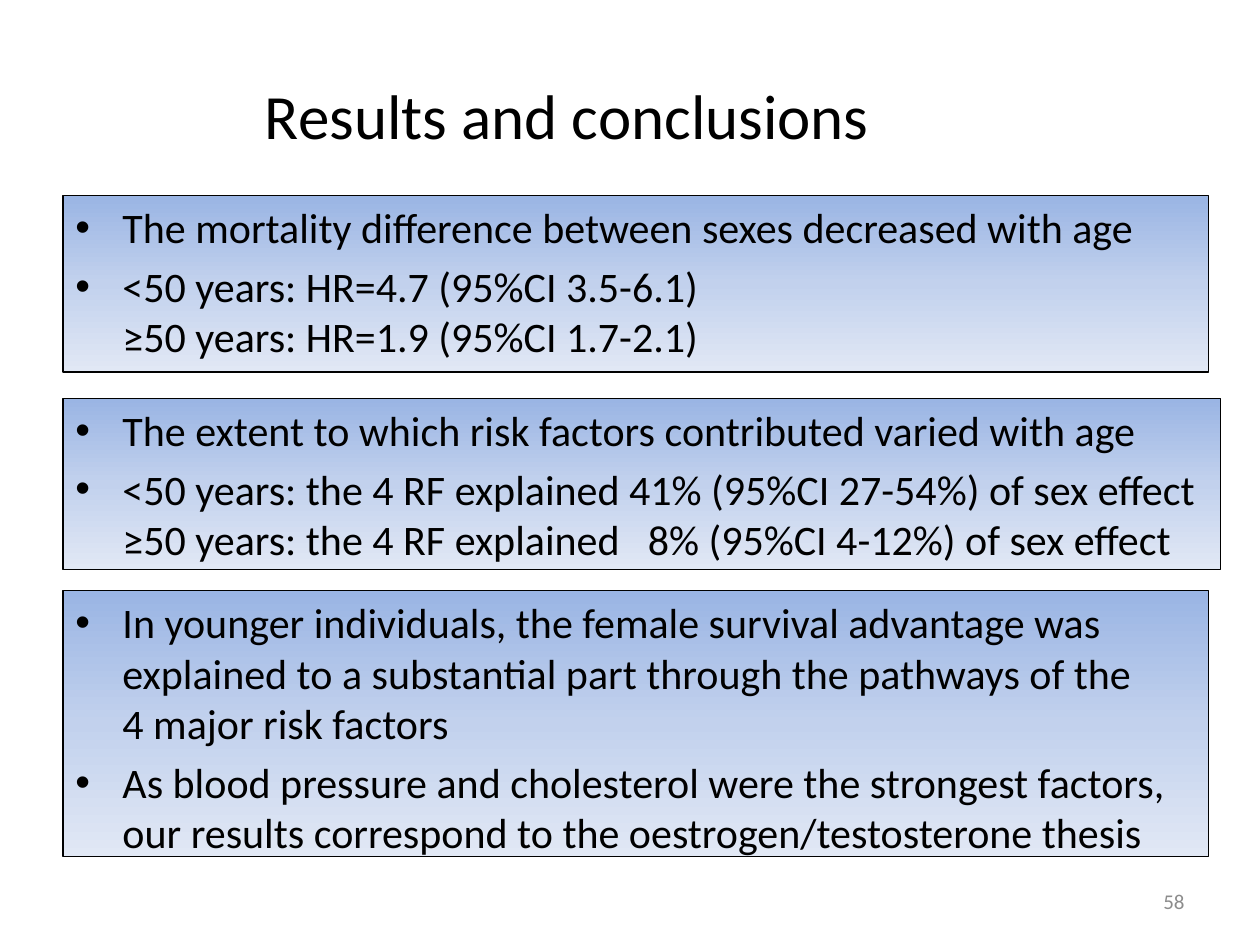
from copy import deepcopy
from lxml import etree
from pptx import Presentation, util as u
from pptx.dml.color import RGBColor
from pptx.enum import shapes, text
from pptx.oxml.ns import qn

TITLE = "Results and conclusions"
PAGE = "58"
LEFT, HANG, TAB = 1.27, 0.95, 11.54
BOXES = [
    (3.94, 23.09, 3.56, [
        ["The mortality difference between sexes decreased with age"],
        ["<50 years: HR=4.7 (95%CI 3.5-6.1)",
         "≥50 years: HR=1.9 (95%CI 1.7-2.1)"]]),
    (8.03, 23.34, 3.45, [
        ["The extent to which risk factors contributed varied with age"],
        ["<50 years: the 4 RF explained 41% (95%CI 27-54%) of sex effect",
         "≥50 years: the 4 RF explained\t8% (95%CI 4-12%) of sex effect"]]),
    (11.91, 23.09, 5.36, [
        ["In younger individuals, the female survival advantage was explained "
         "to a substantial part through the pathways of the",
         "4 major risk factors"],
        ["As blood pressure and cholesterol were the strongest factors, our "
         "results correspond to the oestrogen/testosterone thesis"]]),
]
STOPS = [(0, "9AB5E4"), (0.5, "C2D1ED"), (1, "E1E8F5")]


def paint(color, code):
    color.rgb = RGBColor.from_string(code)


def write(para, words, size, code="000000"):
    run = para.add_run()
    run.text = words
    run.font.name = "Calibri"
    run.font.size = u.Pt(size)
    paint(run.font.color, code)


def shade(shape):
    shape.fill.gradient()
    shape.fill.gradient_angle = 270
    stops = shape._element.spPr.find(".//" + qn("a:gsLst"))
    stops.append(deepcopy(stops[-1]))
    for stop, (place, code) in zip(shape.fill.gradient_stops, STOPS):
        stop.position = place
        paint(stop.color, code)


def bullet(para):
    props = para._p.get_or_add_pPr()
    props.set("marL", str(u.Cm(HANG)))
    props.set("indent", str(-u.Cm(HANG)))
    etree.SubElement(props, qn("a:buFont"), typeface="Arial")
    etree.SubElement(props, qn("a:buChar"), char="•")
    tabs = etree.SubElement(props, qn("a:tabLst"))
    etree.SubElement(tabs, qn("a:tab"), pos=str(u.Cm(TAB)), algn="l")


def panel(slide, top, wide, high, items):
    box = slide.shapes.add_shape(shapes.MSO_SHAPE.RECTANGLE, u.Cm(LEFT),
                                 u.Cm(top), u.Cm(wide), u.Cm(high))
    box.shadow.inherit = False
    shade(box)
    paint(box.line.color, "000000")
    box.line.width = u.Pt(0.75)
    frame = box.text_frame
    frame.word_wrap = True
    frame.vertical_anchor = text.MSO_ANCHOR.TOP
    for i, lines in enumerate(items):
        para = frame.add_paragraph() if i else frame.paragraphs[0]
        bullet(para)
        para.alignment = text.PP_ALIGN.LEFT
        para.space_before = u.Pt(4.8 if i else 0)
        for j, line in enumerate(lines):
            if j:
                para.add_line_break()
            write(para, line, 24)


def main():
    """Build the results slide and save it."""
    deck = Presentation()
    deck.slide_width, deck.slide_height = u.Cm(25.4), u.Cm(19.05)
    slide = deck.slides.add_slide(deck.slide_layouts[5])
    title = slide.shapes.title
    title.left, title.top = u.Cm(0), u.Cm(0.71)
    title.width, title.height = u.Cm(22.86), u.Cm(3.18)
    title.text_frame.vertical_anchor = text.MSO_ANCHOR.MIDDLE
    head = title.text_frame.paragraphs[0]
    head.alignment = text.PP_ALIGN.CENTER
    write(head, TITLE, 36)
    for box in BOXES:
        panel(slide, *box)
    note = slide.shapes.add_textbox(u.Cm(18.2), u.Cm(17.66),
                                    u.Cm(5.93), u.Cm(1.01)).text_frame
    note.word_wrap = True
    note.vertical_anchor = text.MSO_ANCHOR.MIDDLE
    note.paragraphs[0].alignment = text.PP_ALIGN.RIGHT
    write(note.paragraphs[0], PAGE, 12, "8C8C8C")
    deck.save("out.pptx")


if __name__ == "__main__":
    main()
